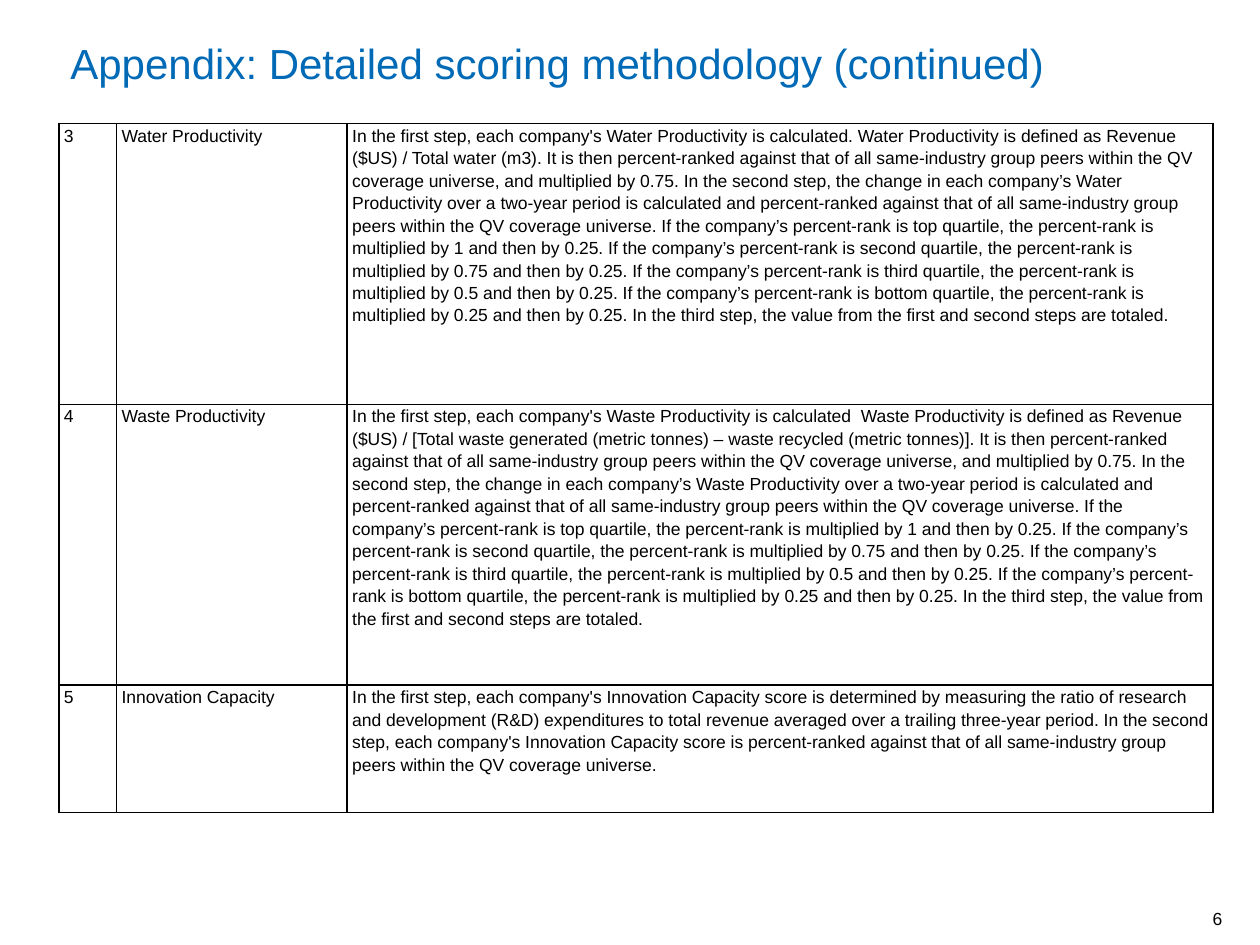
from lxml.etree import SubElement
from pptx import Presentation
from pptx.dml.color import RGBColor
from pptx.enum.text import MSO_ANCHOR, PP_ALIGN
from pptx.oxml.ns import qn
from pptx.util import Cm, Pt

BLACK = "000000"
BLUE = "006AB6"

SECOND_STEP = (
    "It is then percent‐ranked against that of all same‐industry group peers within the QV "
    "coverage universe, and multiplied by 0.75. In the second step, the change in each "
    "company’s {metric} over a two-year period is calculated and percent‐ranked against that "
    "of all same‐industry group peers within the QV coverage universe. "
)
QUARTILE = (
    "If the company’s percent‐rank is {name} quartile, the percent‐rank is multiplied by "
    "{factor} and then by 0.25. "
)
QUARTILE_FACTORS = {"top": "1", "second": "0.75", "third": "0.5", "bottom": "0.25"}
THIRD_STEP = "In the third step, the value from the first and second steps are totaled."


def color(hex_string):
    return RGBColor.from_string(hex_string)


def productivity_method(metric, stop, denominator):
    quartiles = "".join(
        QUARTILE.format(name=name, factor=factor) for name, factor in QUARTILE_FACTORS.items()
    )
    return (
        f"In the first step, each company's {metric} is calculated{stop} {metric} is defined "
        f"as Revenue ($US) / {denominator}. "
        + SECOND_STEP.format(metric=metric) + quartiles + THIRD_STEP
    )


class SlideBuilder:
    """Holds the text style and the current slide."""

    font_name = "Arial"
    body_size = 10

    def __init__(self, slide):
        self.slide = slide

    def fill_text(self, frame, text, size=body_size, hex_color=BLACK, **paragraph_format):
        paragraph = frame.paragraphs[0]
        paragraph.text = text
        for name, value in paragraph_format.items():
            setattr(paragraph, name, value)
        font_format = {"name": self.font_name, "size": Pt(size), "bold": False}
        font = paragraph.runs[0].font
        for name, value in font_format.items():
            setattr(font, name, value)
        font.color.rgb = color(hex_color)

    def text_box(self, box, text, frame_format, **text_format):
        shape = self.slide.shapes.add_textbox(*(Cm(length) for length in box))
        for name, value in {"word_wrap": True, **frame_format}.items():
            setattr(shape.text_frame, name, value)
        self.fill_text(shape.text_frame, text, **text_format)

    def border(self, cell):
        properties = cell._tc.get_or_add_tcPr()
        for position, tag in enumerate(("a:lnL", "a:lnR", "a:lnT", "a:lnB")):
            line = SubElement(properties, qn(tag), w=str(Pt(1)))
            fill = SubElement(line, qn("a:solidFill"))
            SubElement(fill, qn("a:srgbClr"), val=BLACK)
            properties.insert(position, line)

    def table(self, left, top, widths, heights, rows):
        frame = self.slide.shapes.add_table(
            len(heights), len(widths), Cm(left), Cm(top), Cm(sum(widths)), Cm(sum(heights))
        )
        table = frame.table
        table.first_row = table.horz_banding = False
        for column, width in zip(table.columns, widths):
            column.width = Cm(width)
        cell_format = {
            "margin_left": Cm(0.1), "margin_right": Cm(0.1),
            "margin_top": 0, "margin_bottom": 0,
            "vertical_anchor": MSO_ANCHOR.TOP,
        }
        for row, height, texts in zip(table.rows, heights, rows):
            row.height = Cm(height)
            for cell, text in zip(row.cells, texts):
                for name, value in cell_format.items():
                    setattr(cell, name, value)
                cell.fill.background()
                self.border(cell)
                self.fill_text(cell.text_frame, text, line_spacing=1.15)


def main():
    presentation = Presentation()
    presentation.slide_width, presentation.slide_height = Cm(25.4), Cm(19.05)
    slide = presentation.slides.add_slide(presentation.slide_layouts[6])
    builder = SlideBuilder(slide)

    # Page number
    no_margins = dict.fromkeys(
        ("margin_left", "margin_right", "margin_top", "margin_bottom"), 0
    )
    builder.text_box(
        (22.68, 18.21, 1.96, 0.51), "6",
        {**no_margins, "vertical_anchor": MSO_ANCHOR.BOTTOM}, alignment=PP_ALIGN.RIGHT,
    )

    # Scoring table
    innovation_method = (
        "In the first step, each company's Innovation Capacity score is determined by "
        "measuring the ratio of research and development (R&D) expenditures to total revenue "
        "averaged over a trailing three‐year period. In the second step, each company's "
        "Innovation Capacity score is percent‐ranked against that of all same‐industry group "
        "peers within the QV coverage universe."
    )
    water, waste = "Water Productivity", "Waste Productivity"
    waste_total = "[Total waste generated (metric tonnes) – waste recycled (metric tonnes)]"
    rows = [
        ("3", water, productivity_method(water, ".", "Total water (m3)")),
        ("4", waste, productivity_method(waste, " ", waste_total)),
        ("5", "Innovation Capacity", innovation_method),
    ]
    builder.table(1.19, 2.49, (1.16, 4.65, 17.45), (5.66, 5.66, 2.57), rows)

    # Title
    builder.text_box(
        (1.17, 0.64, 21.84, 2.06), "Appendix: Detailed scoring methodology (continued)",
        {"vertical_anchor": MSO_ANCHOR.TOP}, size=24, hex_color=BLUE,
    )

    presentation.save("out.pptx")


if __name__ == "__main__":
    main()
